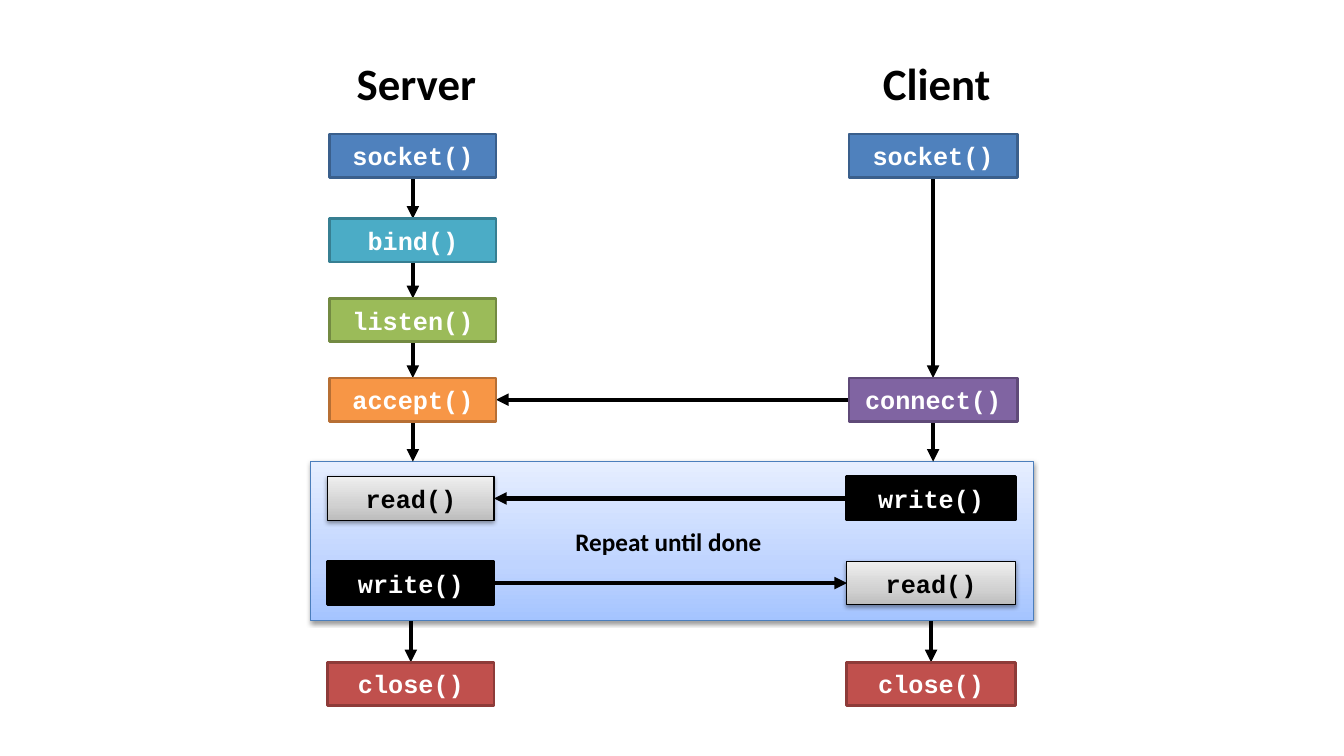
"""Draw the call sequence of a socket server and its client."""
from copy import deepcopy

from lxml.etree import SubElement
from pptx import Presentation
from pptx.dml.color import RGBColor
from pptx.enum.shapes import MSO_CONNECTOR, MSO_SHAPE
from pptx.enum.text import MSO_ANCHOR, MSO_AUTO_SIZE, PP_ALIGN
from pptx.oxml.ns import qn
from pptx.util import Pt

PX = 9144
THEME = {
    "black": "000000",
    "heading_font": "Calibri",
    "code_font": "Courier New",
    "heading_size": 32,
    "body_size": 18,
    "arrow_width": 3,
    "calls": {
        "socket()": ("4F81BD", "3A5F8C", 2, "FFFFFF"),
        "bind()": ("4BACC6", "377F92", 2, "FFFFFF"),
        "listen()": ("9BBB59", "738A42", 2, "FFFFFF"),
        "accept()": ("F79646", "B76F34", 2, "FFFFFF"),
        "connect()": ("8064A2", "5F4A78", 2, "FFFFFF"),
        "read()": (("BDBDBD", "D1D1D1", "EEEEEE"), "000000", 0.75, "000000"),
        "write()": ("000000", "000000", 2, "FFFFFF"),
        "close()": ("C0504D", "8E3B39", 2, "FFFFFF"),
    },
    "loop": (("A4C4FF", "BFD4FF", "E6EEFF"), "4B7EBC", 0.75),
}

presentation = Presentation()
presentation.slide_width = 1333 * PX
presentation.slide_height = 750 * PX
slide = presentation.slides.add_slide(presentation.slide_layouts[6])


def add_box(bounds, fill_colors, line_color, line_width):
    box = slide.shapes.add_shape(MSO_SHAPE.RECTANGLE, *(n * PX for n in bounds))
    box.shadow.inherit = False
    box.line.color.rgb = RGBColor.from_string(line_color)
    box.line.width = Pt(line_width)
    if isinstance(fill_colors, str):
        box.fill.solid()
        box.fill.fore_color.rgb = RGBColor.from_string(fill_colors)
        return box
    box.fill.gradient()
    box.fill.gradient_angle = 90
    properties = box._element.spPr
    stops = properties.find(".//" + qn("a:gsLst"))
    stops.append(deepcopy(stops[0]))
    for stop, position, color in zip(box.fill.gradient_stops, (0, 0.35, 1), fill_colors):
        stop.position = position
        stop.color.rgb = RGBColor.from_string(color)
    shadow = SubElement(properties.find(qn("a:effectLst")), qn("a:outerShdw"),
                        blurRad="40000", dist="20000", dir="5400000", rotWithShape="0")
    shadow_color = SubElement(shadow, qn("a:srgbClr"), val=THEME["black"])
    SubElement(shadow_color, qn("a:alpha"), val="38000")
    return box


def write_text(frame, text, font_name, size, color):
    frame.text = text
    frame.word_wrap = True
    paragraph = frame.paragraphs[0]
    paragraph.alignment = PP_ALIGN.CENTER
    font = paragraph.runs[0].font
    font.name = font_name
    font.size = Pt(size)
    font.bold = True
    font.color.rgb = RGBColor.from_string(color)


loop = add_box((308, 458, 717, 158), *THEME["loop"])

columns = {
    "server": (327, 165, {"socket()": 133, "bind()": 217, "listen()": 296, "accept()": 375,
                          "read()": 473, "write()": 557, "close()": 657}),
    "client": (842, 167, {"socket()": 133, "connect()": 375,
                          "write()": 473, "read()": 557, "close()": 657}),
}
steps = {"loop": loop}
for side, (left, width, calls) in columns.items():
    for call, top in calls.items():
        fill_colors, line_color, line_width, text_color = THEME["calls"][call]
        shift = 2 if top > 458 else 0
        step = add_box((left - shift, top, width, 43), fill_colors, line_color, line_width)
        step.text_frame.vertical_anchor = MSO_ANCHOR.MIDDLE
        write_text(step.text_frame, call, THEME["code_font"], THEME["body_size"], text_color)
        steps[f"{side} {call}"] = step

TOP, LEFT, BOTTOM, RIGHT = range(4)
arrows = [
    ("server socket()", BOTTOM, "server bind()", TOP),
    ("server bind()", BOTTOM, "server listen()", TOP),
    ("server listen()", BOTTOM, "server accept()", TOP),
    ("server accept()", BOTTOM, "loop", TOP),
    ("loop", BOTTOM, "server close()", TOP),
    ("client socket()", BOTTOM, "client connect()", TOP),
    ("client connect()", BOTTOM, "loop", TOP),
    ("loop", BOTTOM, "client close()", TOP),
    ("client connect()", LEFT, "server accept()", RIGHT),
    ("client write()", LEFT, "server read()", RIGHT),
    ("server write()", RIGHT, "client read()", LEFT),
]
for source_name, exit_side, target_name, entry_side in arrows:
    source, target = steps[source_name], steps[target_name]
    guide = target if source is loop else source
    x = guide.left + guide.width // 2
    arrow = slide.shapes.add_connector(
        MSO_CONNECTOR.STRAIGHT, x, source.top + source.height, x, target.top)
    if source is not loop:
        arrow.begin_connect(source, exit_side)
    if target is not loop:
        arrow.end_connect(target, entry_side)
    arrow.line.color.rgb = RGBColor.from_string(THEME["black"])
    arrow.line.width = Pt(THEME["arrow_width"])
    SubElement(arrow.line._get_or_add_ln(), qn("a:tailEnd"), type="triangle")
    SubElement(arrow._element.spPr, qn("a:effectLst"))
    loop._element.addnext(arrow._element)

captions = [
    ("Repeat until done", 542, 517, 40, THEME["body_size"]),
    ("Server", 292, 50, 64, THEME["heading_size"]),
    ("Client", 808, 50, 64, THEME["heading_size"]),
]
for text, left, top, height, size in captions:
    caption = slide.shapes.add_textbox(left * PX, top * PX, 242 * PX, height * PX)
    write_text(caption.text_frame, text, THEME["heading_font"], size, THEME["black"])
    caption.text_frame.auto_size = MSO_AUTO_SIZE.SHAPE_TO_FIT_TEXT

presentation.save("out.pptx")
